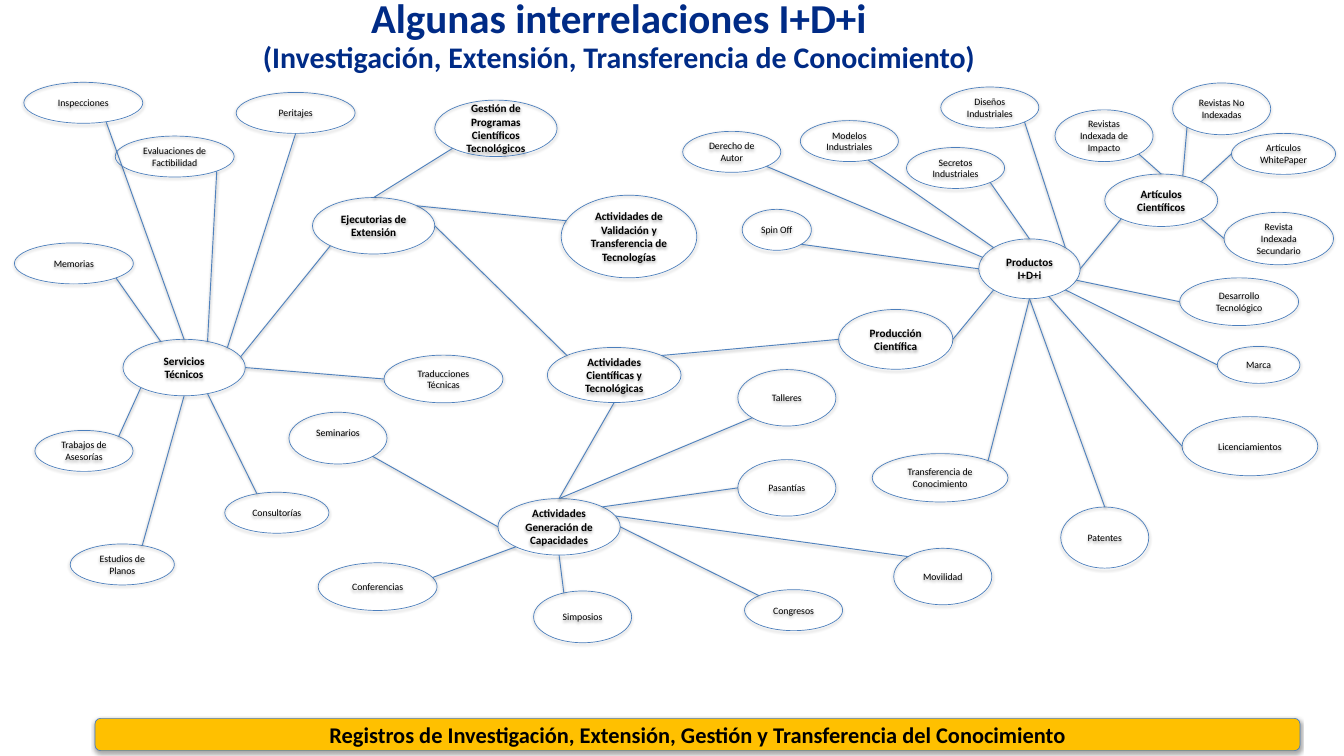
from math import cos, pi, sin

from lxml import etree
from pptx import Presentation
from pptx.dml.color import RGBColor
from pptx.enum.shapes import MSO_CONNECTOR, MSO_SHAPE
from pptx.enum.text import MSO_ANCHOR, PP_ALIGN
from pptx.oxml.ns import qn
from pptx.util import Cm, Pt

ELLIPSE, ROUNDED = MSO_SHAPE.OVAL, MSO_SHAPE.ROUNDED_RECTANGLE
STRAIGHT = MSO_CONNECTOR.STRAIGHT
MIDDLE, CENTER = MSO_ANCHOR.MIDDLE, PP_ALIGN.CENTER

BLACK, NAVY, AMBER = "000000", "002B86", "FFC000"
OUTLINE, LINK = "4B7EBC", "4F81BD"

# Ellipse sizes, in slide units
SMALL, MEDIUM, WIDE = (1.46, 0.61), (1.55, 0.61), (1.77, 0.61)
JOURNAL, TALL, BROAD = (1.46, 0.77), (1.46, 0.84), (1.77, 0.71)
LONG, LARGE, HUB = (2.02, 0.72), (2.02, 0.88), (1.82, 0.84)

COMPASS = "n nne ne ene e ese se sse s ssw sw wsw w wnw nw nnw".split()


def color(value):
    return RGBColor.from_string(value)


def units(*values):
    """Turn slide units (20 across the slide, 2.54 cm each) into lengths."""
    return [Cm(value * 2.54) for value in values]


def rim(center, size, heading):
    """Give the point of an ellipse that lies at a compass heading."""
    angle = COMPASS.index(heading) * 2 * pi / len(COMPASS)
    return (center[0] + size[0] / 2 * sin(angle),
            center[1] - size[1] / 2 * cos(angle))


class ConceptMap:
    font = "Calibri"

    def __init__(self, slide):
        self.slide = slide

    def style(self, paragraph, size, bold, ink):
        paragraph.alignment = CENTER
        paragraph.font.name = self.font
        paragraph.font.size = Pt(size)
        paragraph.font.bold = bold
        paragraph.font.color.rgb = color(ink)

    def shadow(self, properties, distance, opacity):
        """Put a soft shadow straight below a shape or connector."""
        effects = properties.find(qn("a:effectLst"))
        if effects is None:
            effects = etree.SubElement(properties, qn("a:effectLst"))
        outer = etree.SubElement(effects, qn("a:outerShdw"), blurRad="40000",
                                 dist=str(distance), dir="5400000", rotWithShape="0")
        tint = etree.SubElement(outer, qn("a:srgbClr"), val=BLACK)
        etree.SubElement(tint, qn("a:alpha"), val=str(opacity * 1000))

    def node(self, text, center, size, points=10.5, bold=False, kind=ELLIPSE, fill=None):
        corner = [middle - extent / 2 for middle, extent in zip(center, size)]
        shape = self.slide.shapes.add_shape(kind, *units(*corner, *size))
        if fill:
            shape.fill.solid()
            shape.fill.fore_color.rgb = color(fill)
        else:
            shape.fill.background()
        shape.line.color.rgb = color(OUTLINE)
        shape.line.width = Pt(0.75)
        shape.shadow.inherit = False
        self.shadow(shape._element.spPr, 23000, 35)
        frame = shape.text_frame
        frame.word_wrap = True
        frame.vertical_anchor = MIDDLE
        frame.text = text
        for paragraph in frame.paragraphs:
            self.style(paragraph, points, bold, BLACK)
        return shape

    def link(self, start, end):
        line = self.slide.shapes.add_connector(STRAIGHT, *units(*start, *end))
        line.line.color.rgb = color(LINK)
        line.line.width = Pt(1)
        self.shadow(line._element.spPr, 20000, 38)

    def title(self, box, lines):
        frame = self.slide.shapes.add_textbox(*units(*box)).text_frame
        frame.word_wrap = True
        frame.vertical_anchor = MIDDLE
        frame.text = "\n".join(text for text, _ in lines)
        for paragraph, (_, points) in zip(frame.paragraphs, lines):
            self.style(paragraph, points, True, NAVY)
            paragraph.line_spacing = 0.9


SERVICES = "Servicios Técnicos"
SKILLS = "Actividades Generación de Capacidades"
PRODUCTS = "Productos I+D+i"
ARTICLES = "Artículos Científicos"
SCIENCE = "Actividades Científicas y Tecnológicas"
OUTPUT = "Producción Científica"
EXTENSION = "Ejecutorias de Extensión"
PROGRAMS = "Gestión de Programas Científicos Tecnológicos"
VALIDATION = "Actividades de Validación y Transferencia de Tecnologías"

# Center and size of each hub
HUBS = {
    SERVICES: ((2.74, 5.47), HUB),
    SKILLS: ((8.32, 7.84), HUB),
    PRODUCTS: ((15.32, 4), (1.51, 0.89)),
    ARTICLES: ((17.28, 2.98), (1.68, 0.78)),
    SCIENCE: ((9.14, 5.58), (1.99, 0.82)),
    OUTPUT: ((13.33, 5.05), (1.7, 0.89)),
    EXTENSION: ((5.56, 3.36), HUB),
    PROGRAMS: ((7.38, 1.91), HUB),
    VALIDATION: ((9.36, 3.52), (2.02, 1.23)),
}

# Leaves of each hub: text, center, size, headings of the link at hub and leaf
LEAVES = {
    SERVICES: [
        ("Inspecciones", (1.24, 1.53), WIDE, "n", "sse"),
        ("Evaluaciones de Factibilidad", (2.6, 2.33), WIDE, "nne", "se"),
        ("Peritajes", (4.4, 1.68), WIDE, "ne", "s"),
        ("Memorias", (1.1, 3.92), WIDE, "nnw", "se"),
        ("Traducciones\nTécnicas", (6.6, 5.64), BROAD, "e", "w"),
        ("Trabajos de Asesorías", (1.25, 6.71), SMALL, "sw", "ne"),
        ("Estudios de Planos", (1.82, 8.4), MEDIUM, "s", "nne"),
        ("Consultorías", (4.12, 7.63), MEDIUM, "sse", "nnw"),
    ],
    SKILLS: [
        ("Seminarios", (5.03, 6.52), JOURNAL, "w", "se"),
        ("Conferencias", (5.62, 8.73), BROAD, "sw", "ene"),
        ("Simposios", (8.67, 9.18), JOURNAL, "s", "nnw"),
        ("Congresos", (11.81, 9.08), SMALL, "e", "nw"),
        ("Movilidad", (14.03, 8.58), TALL, "ene", "nw"),
        ("Pasantías", (11.71, 7.26), TALL, "ne", "w"),
        ("Talleres", (11.71, 5.92), TALL, "n", "sw"),
    ],
    PRODUCTS: [
        ("Diseños Industriales", (14.73, 1.6), SMALL, "ne", "se"),
        ("Secretos Industriales", (14.22, 2.5), SMALL, "n", "se"),
        ("Modelos Industriales", (12.64, 2.1), SMALL, "nw", "sse"),
        ("Derecho de Autor", (10.89, 2.26), SMALL, "wnw", "se"),
        ("Spin Off", (11.56, 3.42), (1.03, 0.61), "w", "se"),
        ("Desarrollo Tecnológico", (18.44, 4.49), BROAD, "ese", "w"),
        ("Marca", (18.73, 5.43), (1.23, 0.55), "se", "w"),
        ("Licenciamientos", (18.6, 6.64), LARGE, "sse", "w"),
        ("Patentes", (16.44, 8), (1.31, 0.91), "s", "n"),
        ("Transferencia de Conocimiento", (13.99, 7.11), LONG, "s", "ne"),
    ],
    ARTICLES: [
        ("Revistas Indexada de Impacto", (16.43, 2.02), JOURNAL, "n", "se"),
        ("Revistas No Indexadas", (18.18, 1.62), JOURNAL, "nne", "sw"),
        ("Artículos WhitePaper", (19.1, 2.29), MEDIUM, "ne", "w"),
        ("Revista Indexada Secundario", (19.03, 3.55), (1.63, 0.78), "se", "w"),
    ],
}

HUB_LINKS = [
    (PRODUCTS, "e", ARTICLES, "sw"), (OUTPUT, "e", PRODUCTS, "sw"),
    (SCIENCE, "ne", OUTPUT, "w"), (SCIENCE, "s", SKILLS, "n"),
    (SCIENCE, "nw", EXTENSION, "e"), (EXTENSION, "sw", SERVICES, "ene"),
    (EXTENSION, "n", PROGRAMS, "sw"), (EXTENSION, "ne", VALIDATION, "wnw"),
]


def main():
    deck = Presentation()
    deck.slide_width, deck.slide_height = units(20, 11.25)
    concept_map = ConceptMap(deck.slides.add_slide(deck.slide_layouts[6]))

    for hub, place in HUBS.items():
        concept_map.node(hub, *place, points=12, bold=True)
        for text, center, size, leaving, arriving in LEAVES.get(hub, []):
            leaf = concept_map.node(text, center, size)
            if text == "Seminarios":  # its text sits above the middle
                leaf.text_frame.margin_bottom = Cm(0.58)
            concept_map.link(rim(*place, leaving), rim(center, size, arriving))
    for first, leaving, second, arriving in HUB_LINKS:
        concept_map.link(rim(*HUBS[first], leaving), rim(*HUBS[second], arriving))

    concept_map.title((0.21, 0.05, 18.01, 0.99), [
        ("Algunas interrelaciones I+D+i", 44),
        ("(Investigación, Extensión, Transferencia de Conocimiento)", 32),
    ])
    concept_map.node(
        "Registros de Investigación, Extensión, Gestión y Transferencia del Conocimiento",
        (10.38, 10.93), (17.93, 0.48), points=24, bold=True, kind=ROUNDED, fill=AMBER)
    deck.save("out.pptx")


if __name__ == "__main__":
    main()
